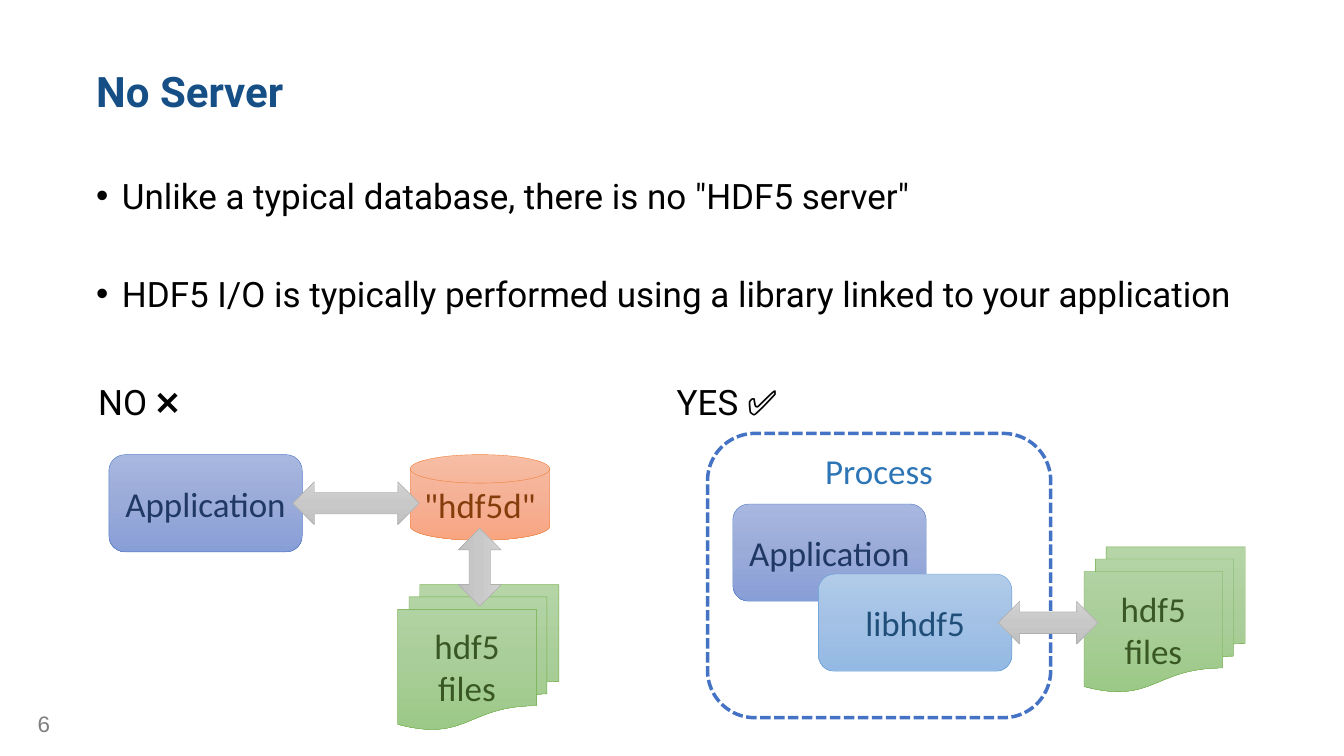
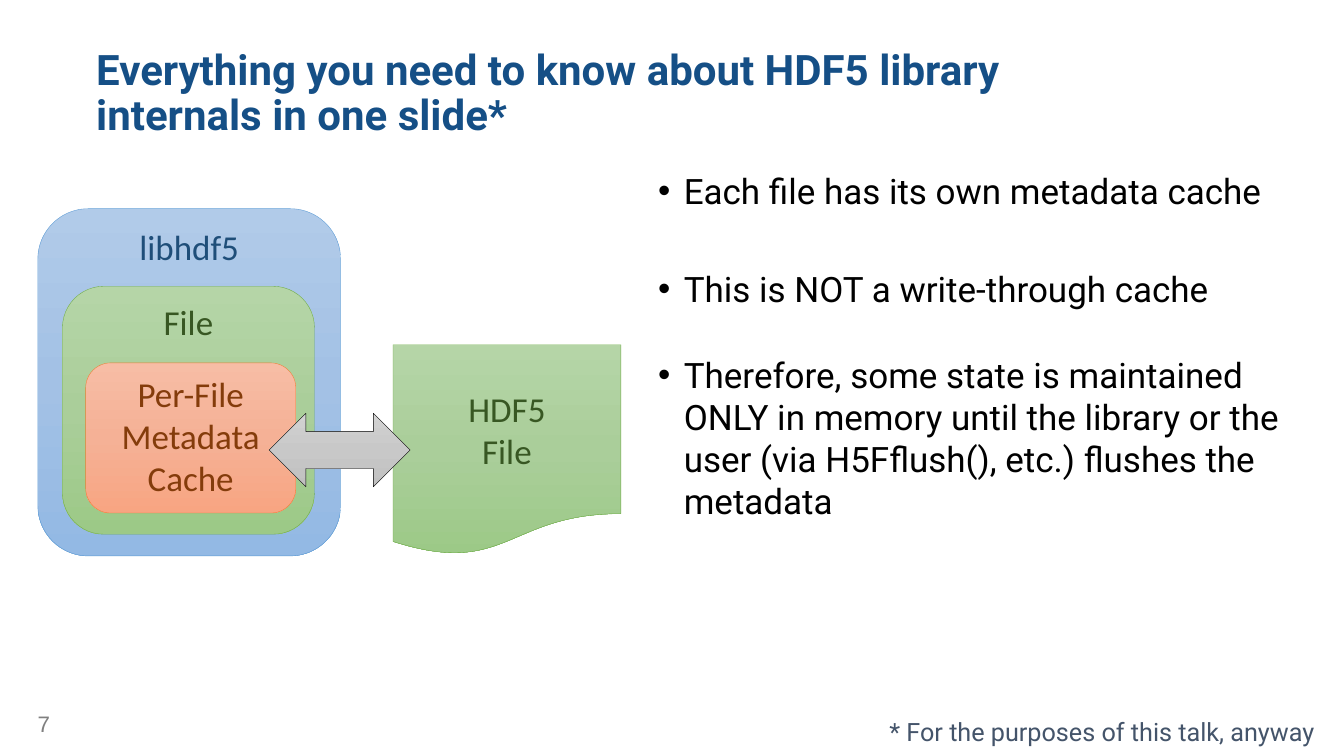
from copy import deepcopy
from dataclasses import dataclass

from lxml.etree import SubElement
from pptx import Presentation
from pptx.dml.color import RGBColor
from pptx.enum.dml import MSO_LINE
from pptx.enum.shapes import MSO_SHAPE
from pptx.enum.text import MSO_ANCHOR, MSO_AUTO_SIZE, PP_ALIGN
from pptx.oxml.ns import qn
from pptx.shapes.autoshape import Shape
from pptx.slide import Slide
from pptx.util import Emu, Pt

PX = 9144
COLORS = {
    "title": "154F86",
    "text": "000000",
    "number": "808080",
    "footnote": "44546A",
    "process_line": "4472C4",
    "process_text": "2E75B6",
}


@dataclass(frozen=True)
class Area:
    """A rectangle in px, one hundred to the inch."""

    left: int
    top: int
    width: int
    height: int

    def emu(self) -> tuple[Emu, ...]:
        """Return the rectangle in EMU."""
        return tuple(Emu(length * PX) for length in (self.left, self.top, self.width, self.height))


@dataclass(frozen=True)
class Paint:
    """A vertical gradient with its outline and text colours."""

    stops: tuple[str, str, str]
    line: str
    text: str


@dataclass(frozen=True)
class TextStyle:
    """The font of a whole paragraph."""

    font: str
    size: int
    color: str
    bold: bool = False


@dataclass(frozen=True)
class Node:
    """A painted shape of a diagram."""

    kind: MSO_SHAPE
    area: Area
    paint: Paint
    label: str = ""
    anchor: MSO_ANCHOR = MSO_ANCHOR.MIDDLE
    rotation: int = 0


@dataclass(frozen=True)
class Bullet:
    """A bulleted line and the points of space above it."""

    text: str
    space_before: int = 0


INDIGO = Paint(("A8B7DF", "9AABD9", "889ED7"), "4472C4", "203864")
BLUE = Paint(("B1CBE9", "A3C1E5", "93B9E4"), "5B9BD5", "1F4E79")
ORANGE = Paint(("F7BDA5", "F5B196", "F8A582"), "ED7D31", "843C0B")
GREEN = Paint(("B5D5A7", "AACE9A", "9CC987"), "70AD47", "385723")
GRAY = Paint(("D2D2D2", "C8C8C8", "C0C0C0"), "A5A5A5", "000000")
GRAY_OUTLINED = Paint(GRAY.stops, "000000", "000000")

TITLE_STYLE = TextStyle("Roboto", 60, COLORS["title"], True)
BODY_STYLE = TextStyle("Roboto", 50, COLORS["text"])
NUMBER_STYLE = TextStyle("Arial", 32, COLORS["number"])
FOOTNOTE_STYLE = TextStyle("Roboto", 36, COLORS["footnote"])

TITLE_AREA = Area(185, 147, 1865, 80)
NUMBER_AREA = Area(65, 1405, 75, 64)
INSET = 6
HANGING = 51

ROUNDED = MSO_SHAPE.ROUNDED_RECTANGLE
ARROW = MSO_SHAPE.LEFT_RIGHT_ARROW
FILES = MSO_SHAPE.FLOWCHART_MULTIDOCUMENT


def write(box: Shape, text: str, style: TextStyle, align: PP_ALIGN = PP_ALIGN.LEFT) -> None:
    """Put text into a shape, one paragraph a line."""
    box.text_frame.text = text
    for para in box.text_frame.paragraphs:
        para.alignment = align
        set_font(para, style)


def set_font(para, style: TextStyle) -> None:
    """Apply a style to a paragraph."""
    para.font.name = style.font
    para.font.size = Pt(style.size)
    para.font.bold = style.bold
    para.font.color.rgb = RGBColor.from_string(style.color)


def add_label(page: Slide, area: Area, text: str, style: TextStyle) -> None:
    """Add a single line that fits its text."""
    box = page.shapes.add_textbox(*area.emu())
    box.text_frame.word_wrap = False
    box.text_frame.auto_size = MSO_AUTO_SIZE.SHAPE_TO_FIT_TEXT
    write(box, text, style)


def add_block(page: Slide, area: Area, anchor: MSO_ANCHOR) -> Shape:
    """Add a wrapping text box with narrow insets."""
    box = page.shapes.add_textbox(*area.emu())
    frame = box.text_frame
    frame.word_wrap = True
    frame.vertical_anchor = anchor
    frame.margin_left = frame.margin_right = Emu(INSET * PX)
    frame.margin_top = frame.margin_bottom = Emu(INSET * PX)
    return box


def add_page(deck, title: str, number: int) -> Slide:
    """Add a slide with its title and number."""
    page = deck.slides.add_slide(deck.slide_layouts[6])
    add_label(page, NUMBER_AREA, str(number), NUMBER_STYLE)
    box = add_block(page, TITLE_AREA, MSO_ANCHOR.MIDDLE)
    write(box, title, TITLE_STYLE)
    box.text_frame.paragraphs[0].line_spacing = 0.9
    return page


def add_bullets(page: Slide, area: Area, bullets: list[Bullet]) -> None:
    """Add a bulleted list."""
    frame = add_block(page, area, MSO_ANCHOR.TOP).text_frame
    for index, bullet in enumerate(bullets):
        para = frame.add_paragraph() if index else frame.paragraphs[0]
        para.text = bullet.text
        properties = para._p.get_or_add_pPr()
        properties.set("marL", str(HANGING * PX))
        properties.set("indent", str(-HANGING * PX))
        SubElement(properties, qn("a:buFont"), typeface="Arial")
        SubElement(properties, qn("a:buChar"), char="•")
        para.space_before = Pt(bullet.space_before)
        set_font(para, BODY_STYLE)


def paint_shape(shape: Shape, paint: Paint) -> None:
    """Fill a shape from top to bottom and outline it."""
    shape.fill.gradient()
    shape.fill.gradient_angle = 270
    stop_list = shape._element.spPr.find(".//" + qn("a:gsLst"))
    stop_list.insert(1, deepcopy(stop_list[0]))
    for index, (stop, color) in enumerate(zip(shape.fill.gradient_stops, paint.stops)):
        stop.position = index / 2
        stop.color.rgb = RGBColor.from_string(color)
    shape.line.color.rgb = RGBColor.from_string(paint.line)
    shape.line.width = Pt(0.5)


def add_node(page: Slide, node: Node) -> None:
    """Add a painted shape with its label."""
    shape = page.shapes.add_shape(node.kind, *node.area.emu())
    shape.shadow.inherit = False
    shape.rotation = node.rotation
    paint_shape(shape, node.paint)
    if node.label:
        shape.text_frame.vertical_anchor = node.anchor
        write(shape, node.label, TextStyle("Calibri", 50, node.paint.text), PP_ALIGN.CENTER)


def add_process(page: Slide, area: Area) -> None:
    """Add the dashed frame of the process."""
    shape = page.shapes.add_shape(ROUNDED, *area.emu())
    shape.shadow.inherit = False
    shape.fill.background()
    shape.line.color.rgb = RGBColor.from_string(COLORS["process_line"])
    shape.line.width = Pt(5)
    shape.line.dash_style = MSO_LINE.SQUARE_DOT
    shape.text_frame.vertical_anchor = MSO_ANCHOR.TOP
    write(shape, "Process", TextStyle("Calibri", 50, COLORS["process_text"]), PP_ALIGN.CENTER)


def build_no_server(deck) -> None:
    """Compare a database server with a linked library."""
    page = add_page(deck, "No Server", 6)
    add_bullets(page, Area(185, 340, 2297, 331), [
        Bullet('Unlike a typical database, there is no "HDF5 server"'),
        Bullet("HDF5 I/O is typically performed using a library linked to your application", 80),
    ])
    add_label(page, Area(185, 750, 215, 94), "NO ❌", BODY_STYLE)
    add_label(page, Area(1333, 750, 238, 94), "YES ✅", BODY_STYLE)
    for node in (
        Node(ROUNDED, Area(216, 902, 384, 193), INDIGO, "Application"),
        Node(MSO_SHAPE.FLOWCHART_MAGNETIC_DISK, Area(814, 902, 277, 170), ORANGE, '"hdf5d"'),
        Node(FILES, Area(789, 1160, 320, 288), GREEN, "hdf5 files"),
        Node(ARROW, Area(581, 956, 251, 85), GRAY),
        Node(ARROW, Area(875, 1083, 154, 85), GRAY, rotation=90),
        Node(ROUNDED, Area(1454, 1000, 384, 193), INDIGO, "Application"),
        Node(FILES, Area(2151, 1085, 320, 288), GREEN, "hdf5 files"),
        Node(ROUNDED, Area(1624, 1139, 384, 193), BLUE, "libhdf5"),
    ):
        add_node(page, node)
    add_process(page, Area(1404, 860, 681, 564))
    add_node(page, Node(ARROW, Area(1981, 1193, 198, 85), GRAY))


def build_internals(deck) -> None:
    """Show the metadata cache inside the library."""
    title = "Everything you need to know about HDF5 library internals in one slide*"
    page = add_page(deck, title, 7)
    top = MSO_ANCHOR.TOP
    for node in (
        Node(ROUNDED, Area(75, 414, 601, 689), BLUE, "libhdf5", top),
        Node(ROUNDED, Area(124, 568, 500, 492), GREEN, "File", top),
        Node(ROUNDED, Area(170, 720, 417, 298), ORANGE, "Per-File\nMetadata\nCache", top),
        Node(MSO_SHAPE.FLOWCHART_DOCUMENT, Area(780, 684, 452, 418), GREEN, "HDF5\nFile"),
        Node(ARROW, Area(534, 820, 280, 146), GRAY_OUTLINED),
    ):
        add_node(page, node)
    add_bullets(page, Area(1300, 330, 1333, 1003), [
        Bullet("Each file has its own metadata cache"),
        Bullet("This is NOT a write-through cache", 80),
        Bullet(
            "Therefore, some state is maintained ONLY in memory until the library or the "
            "user (via H5Fflush(), etc.) flushes the metadata",
            63,
        ),
    ])
    add_label(page, Area(1755, 1417, 878, 71), "* For the purposes of this talk, anyway", FOOTNOTE_STYLE)


def main() -> None:
    """Build and save the deck."""
    deck = Presentation()
    deck.slide_width = Emu(2667 * PX)
    deck.slide_height = Emu(1500 * PX)
    build_no_server(deck)
    build_internals(deck)
    deck.save("out.pptx")


if __name__ == "__main__":
    main()
